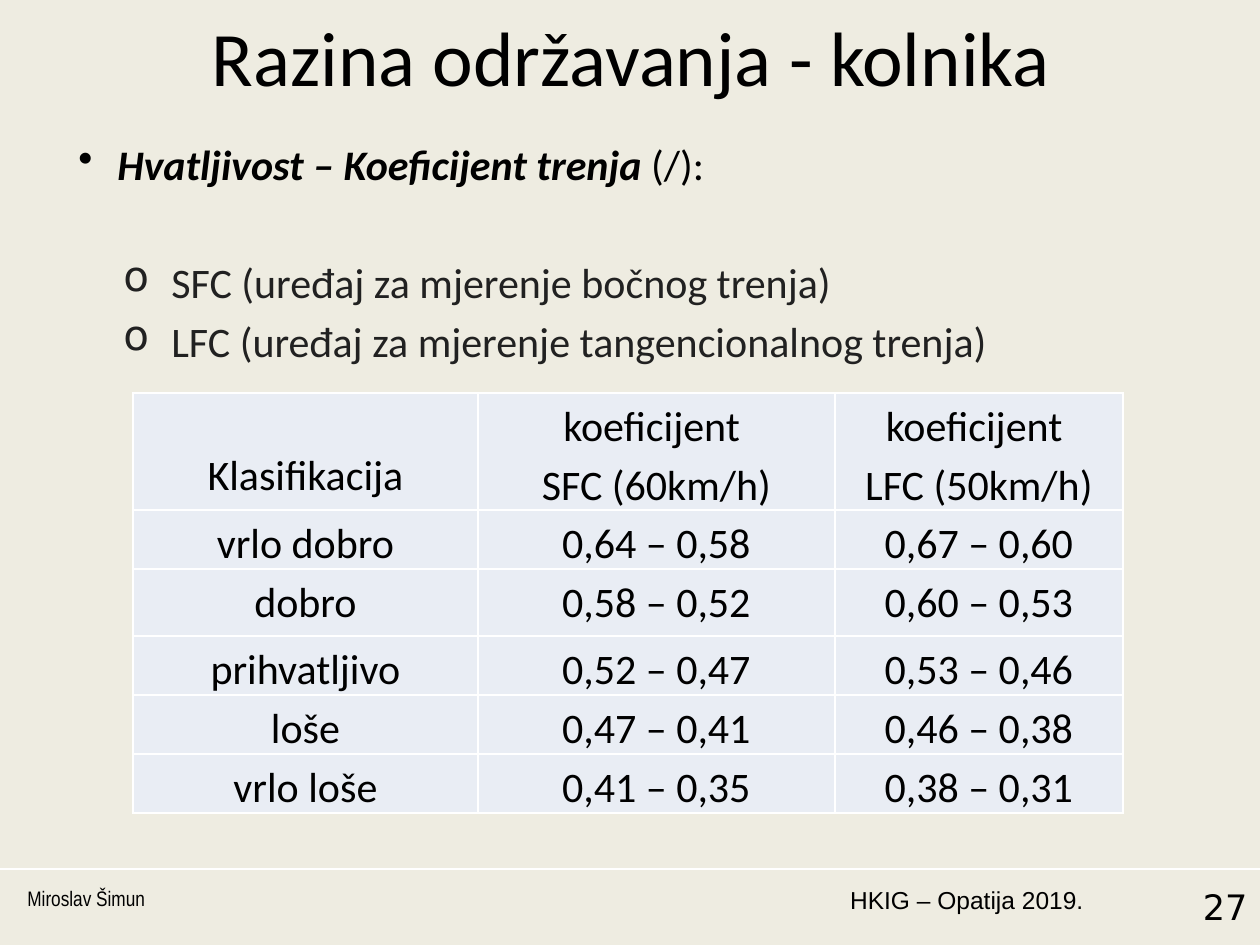
from dataclasses import dataclass

from lxml import etree
from pptx import Presentation
from pptx import util as u
from pptx.dml.color import RGBColor
from pptx.enum import shapes, text
from pptx.oxml import ns

EMU_PER_PX = 914400 / 126


def px(length):
    return u.Emu(round(length * EMU_PER_PX))


def add_xml(parent, tag, **attributes):
    return etree.SubElement(parent, ns.qn(tag), attributes)


@dataclass(frozen=True)
class Theme:
    background: str = "EEECE1"
    ink: str = "000000"
    soft_ink: str = "212121"
    rule: str = "FFFFFF"
    cell: str = "E9EDF4"
    main_font: str = "Calibri"
    event_font: str = "Arial"
    author_font: str = "Arial Narrow"
    number_font: str = "DejaVu Sans"
    title_size: int = 44
    body_size: int = 24
    number_size: int = 20
    event_size: int = 14
    author_size: int = 12


class SlideBuilder:
    def __init__(self, page, theme):
        self.page = page
        self.theme = theme
        page.background.fill.solid()
        page.background.fill.fore_color.rgb = RGBColor.from_string(theme.background)

    def style(self, span, size, font=None, color=None):
        span.font.size = u.Pt(size)
        span.font.name = font or self.theme.main_font
        span.font.color.rgb = RGBColor.from_string(color or self.theme.ink)

    def box(self, left, top, width, height):
        frame = self.page.shapes.add_textbox(*map(px, (left, top, width, height))).text_frame
        frame.word_wrap = True
        return frame

    def label(self, place, words, size, font, align):
        frame = self.box(*place)
        frame.text = words
        para = frame.paragraphs[0]
        para.alignment = align
        self.style(para.runs[0], size, font)

    def bullets(self, place, items):
        frame = self.box(*place)
        frame.text = "\n".join(item["words"] for item in items)
        for para, item in zip(frame.paragraphs, items):
            para.level = item["level"]
            properties = para._p.get_or_add_pPr()
            properties.set("marL", str(px(item["margin"])))
            properties.set("indent", str(px(-item["hang"])))
            add_xml(properties, "a:buChar", char=item["mark"])
            if item["before"]:
                para.space_before = u.Pt(item["before"])
            self.style(para.runs[0], self.theme.body_size, color=item["color"])
        return frame.paragraphs

    def line(self, start, end, width):
        connector = self.page.shapes.add_connector(
            shapes.MSO_CONNECTOR.STRAIGHT, *map(px, start + end))
        connector.line.color.rgb = RGBColor.from_string(self.theme.rule)
        connector.line.width = u.Pt(width)
        add_xml(connector._element.spPr, "a:effectLst")

    def border(self, cell):
        properties = cell._tc.get_or_add_tcPr()
        for side in ("a:lnL", "a:lnR", "a:lnT", "a:lnB"):
            edge = add_xml(properties, side, w=str(u.Pt(1)))
            fill = add_xml(edge, "a:solidFill")
            add_xml(fill, "a:srgbClr", val=self.theme.rule)

    def table(self, left, top, widths, heights, rows):
        table = self.page.shapes.add_table(
            len(rows), len(widths), px(left), px(top),
            px(sum(widths)), px(sum(heights))).table
        table.first_row = table.horz_banding = False
        for column, width in zip(table.columns, widths):
            column.width = px(width)
        for row, height, values in zip(table.rows, heights, rows):
            row.height = px(height)
            for cell, words in zip(row.cells, values):
                self.fill_cell(cell, words)
        return table

    def fill_cell(self, cell, words):
        self.border(cell)
        cell.fill.solid()
        cell.fill.fore_color.rgb = RGBColor.from_string(self.theme.cell)
        cell.margin_left = cell.margin_right = px(9)
        cell.margin_top, cell.margin_bottom = px(1), 0
        cell.text_frame.text = words
        for para in cell.text_frame.paragraphs:
            para.alignment = text.PP_ALIGN.CENTER
            para.line_spacing = 1.15
            self.style(para.runs[0], self.theme.body_size)


def main():
    deck = Presentation()
    deck.slide_width, deck.slide_height = px(1260), px(945)
    theme = Theme()
    builder = SlideBuilder(deck.slides.add_slide(deck.slide_layouts[6]), theme)
    align = text.PP_ALIGN

    builder.line((0, 869), (1260, 869), 1.5)
    builder.label((828, 879, 268, 66), "HKIG – Opatija 2019.",
                  theme.event_size, theme.event_font, align.RIGHT)
    builder.label((15, 879, 273, 66), "Miroslav Šimun",
                  theme.author_size, theme.author_font, align.LEFT)
    builder.label((1106, 879, 154, 66), "27",
                  theme.number_size, theme.number_font, align.RIGHT)
    builder.label((64, 3, 1134, 97), "Razina održavanja - kolnika",
                  theme.title_size, theme.main_font, align.CENTER)

    method = dict(level=3, margin=156, hang=48, mark="o", color=theme.soft_ink)
    heading, *_ = builder.bullets((3, 132, 1250, 714), [
        dict(words="Hvatljivost – Koeficijent trenja ", level=1, margin=102,
             hang=39, mark="•", color=theme.ink, before=0),
        dict(method, words="SFC (uređaj za mjerenje bočnog trenja)", before=38.9),
        dict(method, words="LFC (uređaj za mjerenje tangencionalnog trenja)", before=4.8),
    ])
    heading.runs[0].font.bold = heading.runs[0].font.italic = True
    unit = heading.add_run()
    unit.text = "(/):"
    builder.style(unit, theme.body_size)

    table = builder.table(133, 393, (345, 357, 288), (107, 54, 67, 54, 54, 54), [
        ("Klasifikacija", "koeficijent \nSFC (60km/h)", "koeficijent \nLFC (50km/h)"),
        ("vrlo dobro", "0,64 – 0,58", "0,67 – 0,60"),
        ("dobro", "0,58 – 0,52", "0,60 – 0,53"),
        ("prihvatljivo", "0,52 – 0,47", "0,53 – 0,46"),
        ("loše", "0,47 – 0,41", "0,46 – 0,38"),
        ("vrlo loše", "0,41 – 0,35", "0,38 – 0,31"),
    ])
    corner = table.cell(0, 0)
    corner.vertical_anchor = text.MSO_ANCHOR.BOTTOM
    corner.margin_bottom = px(8)
    corner.text_frame.paragraphs[0].line_spacing = 1.07

    deck.save("out.pptx")


if __name__ == "__main__":
    main()
